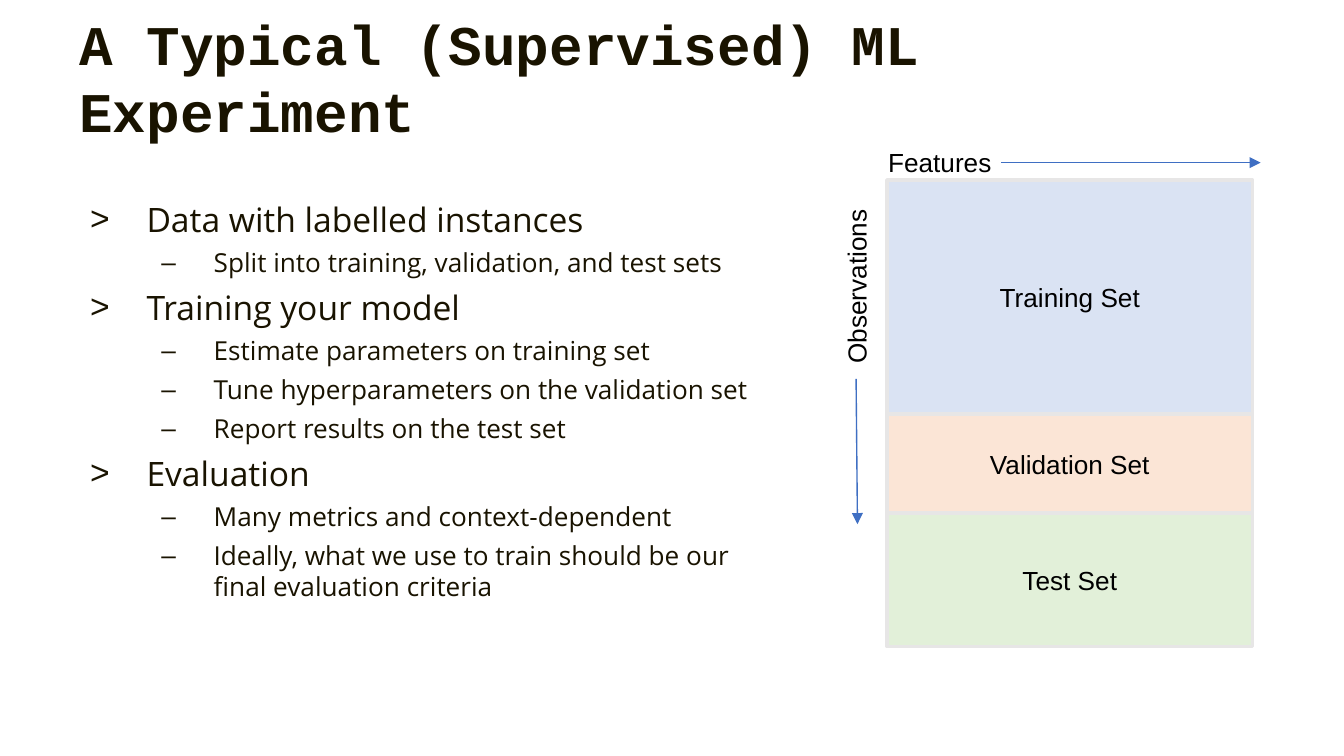
"""Build a slide on a typical supervised ML experiment."""
import lxml.etree
import pptx
import pptx.dml.color
import pptx.enum.shapes
import pptx.enum.text
import pptx.oxml.ns
import pptx.util

Inches = pptx.util.Inches
Pt = pptx.util.Pt
Align = pptx.enum.text.PP_ALIGN
Anchor = pptx.enum.text.MSO_ANCHOR

INK, BLACK, BLUE, BORDER = "191300", "000000", "3F6FC3", "E7E6E6"
LABEL = {"size": Pt(14), "name": "Arial"}
TITLE = {"size": Pt(30), "name": "Courier New", "bold": True}

LEVELS = [
    {"bullet": ">", "margin": 0.5, "indent": -0.42, "before": 4.8,
     "font": {"size": Pt(18), "name": "Open Sans"}},
    {"bullet": "–", "margin": 1, "indent": -0.39, "before": 4,
     "font": {"size": Pt(14), "name": "Open Sans"}},
]
POINTS = [
    (0, "Data with labelled instances"),
    (1, "Split into training, validation, and test sets"),
    (0, "Training your model"),
    (1, "Estimate parameters on training set"),
    (1, "Tune hyperparameters on the validation set"),
    (1, "Report results on the test set"),
    (0, "Evaluation"),
    (1, "Many metrics and context-dependent"),
    (1, "Ideally, what we use to train should be our final evaluation criteria"),
]
DATA_SETS = [
    ("Training Set", 1.74, "DAE3F3"),
    ("Validation Set", 0.74, "FBE5D6"),
    ("Test Set", 0.99, "E2F0D9"),
]


def color(value):
    """Return the RGB colour for a hex string."""
    return pptx.dml.color.RGBColor.from_string(value)


def apply_format(target, values):
    """Set each named attribute on the target."""
    for name, value in values.items():
        setattr(target, name, value)


def add_element(parent, tag, **attributes):
    """Append a DrawingML child element and return it."""
    return lxml.etree.SubElement(parent, pptx.oxml.ns.qn(tag), attributes)


def write(paragraph, text, font_format, text_color):
    """Add one formatted run to a paragraph."""
    run = paragraph.add_run()
    run.text = text
    apply_format(run.font, font_format)
    run.font.color.rgb = color(text_color)


def prepare(shape, left, top, width, height, anchor):
    """Place a placeholder, in inches, and set up its text frame."""
    apply_format(shape, {"left": Inches(left), "top": Inches(top),
                         "width": Inches(width), "height": Inches(height)})
    apply_format(shape.text_frame, {
        "vertical_anchor": anchor, "word_wrap": True,
        "auto_size": pptx.enum.text.MSO_AUTO_SIZE.NONE})


def fill_title(shape, text):
    """Format the title placeholder and write its text."""
    prepare(shape, 0.49, 0.03, 8.96, 1.09, Anchor.BOTTOM)
    paragraph = shape.text_frame.paragraphs[0]
    paragraph.alignment = Align.LEFT
    write(paragraph, text, TITLE, INK)


def fill_body(shape, points):
    """Format the body placeholder and write its bulleted list."""
    prepare(shape, 0.49, 1.43, 5.31, 2.59, Anchor.TOP)
    frame = shape.text_frame
    for index, (level, text) in enumerate(points):
        style = LEVELS[level]
        paragraph = frame.add_paragraph() if index else frame.paragraphs[0]
        apply_format(paragraph, {
            "level": level, "alignment": Align.LEFT,
            "space_before": Pt(style["before"] if index else 0)})
        properties = paragraph._p.get_or_add_pPr()
        properties.set("marL", str(Inches(style["margin"])))
        properties.set("indent", str(Inches(style["indent"])))
        bullet_color = add_element(properties, "a:buClr")
        add_element(bullet_color, "a:srgbClr", val=INK)
        add_element(properties, "a:buChar", char=style["bullet"])
        write(paragraph, text, style["font"], INK)


def add_data_set(slide, text, top, height, fill):
    """Add one labelled block of the data matrix."""
    shape = slide.shapes.add_shape(
        pptx.enum.shapes.MSO_SHAPE.RECTANGLE,
        Inches(6.6), Inches(top), Inches(2.72), Inches(height))
    shape.shadow.inherit = False
    shape.fill.solid()
    shape.fill.fore_color.rgb = color(fill)
    shape.line.color.rgb = color(BORDER)
    shape.line.width = Pt(2)
    shape.text_frame.vertical_anchor = Anchor.MIDDLE
    paragraph = shape.text_frame.paragraphs[0]
    paragraph.alignment = Align.CENTER
    write(paragraph, text, LABEL, BLACK)


def add_label(slide, text, left, top, width, rotation=0):
    """Add an axis label, rotated if asked."""
    shape = slide.shapes.add_textbox(
        Inches(left), Inches(top), Inches(width), Inches(0.35))
    shape.rotation = rotation
    apply_format(shape.text_frame, {
        "word_wrap": True,
        "auto_size": pptx.enum.text.MSO_AUTO_SIZE.SHAPE_TO_FIT_TEXT})
    write(shape.text_frame.paragraphs[0], text, LABEL, BLACK)


def add_arrow(slide, *ends):
    """Add a straight arrow from x, y to x, y in inches."""
    connector = slide.shapes.add_connector(
        pptx.enum.shapes.MSO_CONNECTOR.STRAIGHT, *map(Inches, ends))
    connector.line.color.rgb = color(BLUE)
    connector.line.width = Pt(0.75)
    add_element(connector.line._get_or_add_ln(), "a:tailEnd", type="triangle")
    add_element(connector._element.spPr, "a:effectLst")


def main():
    """Build and save the presentation."""
    presentation = pptx.Presentation()
    presentation.slide_width = Inches(10)
    presentation.slide_height = Inches(10 * 9 / 16)
    slide = presentation.slides.add_slide(presentation.slide_layouts[1])
    fill_title(slide.shapes.title, "A Typical (Supervised) ML Experiment")
    fill_body(slide.placeholders[1], POINTS)
    top = 1.34
    for text, height, fill in DATA_SETS:
        add_data_set(slide, text, top, height, fill)
        top += height
    add_label(slide, "Features", 6.51, 1.04, 3.31)
    add_arrow(slide, 7.45, 1.21, 9.38, 1.21)
    add_label(slide, "Observations", 5.67, 1.92, 1.42, rotation=270)
    add_arrow(slide, 6.37, 2.82, 6.38, 3.9)
    presentation.save("out.pptx")


if __name__ == "__main__":
    main()
